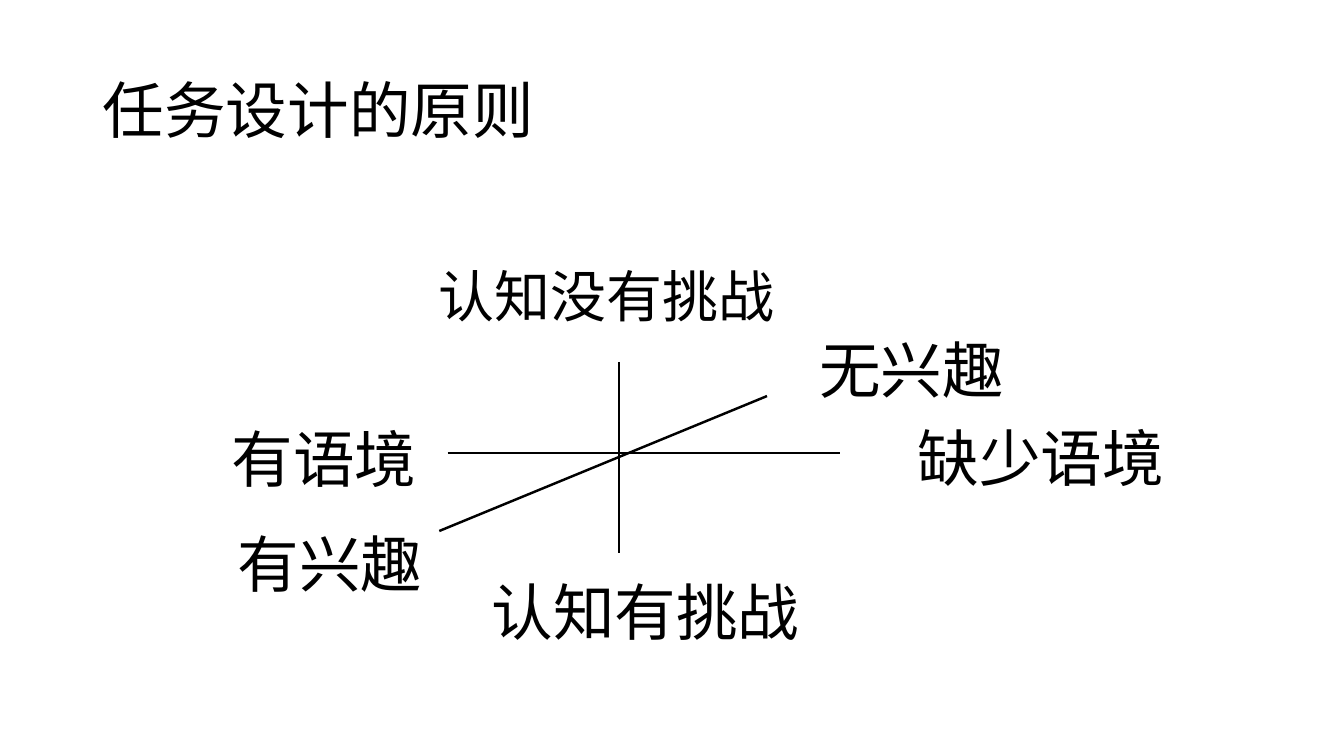
from lxml.etree import SubElement
from pptx import Presentation
from pptx.dml.color import RGBColor
from pptx.enum.shapes import MSO_CONNECTOR as Connector
from pptx.enum.text import MSO_ANCHOR as Anchor, MSO_AUTO_SIZE as AutoSize, PP_ALIGN as Align
from pptx.oxml.ns import qn
from pptx.util import Cm, Pt

# Content: text, box (left, top, width, height in cm), style name
LABELS = [
    ("任务设计的原则", (2.34, 1.02, 29.21, 3.68), "title"),
    ("认知没有挑战", (10.8, 6.46, 11.2, 1.96), "small"),
    ("有语境", (5.59, 10.49, 5.21, 2.13), "end"),
    ("缺少语境", (22.88, 10.45, 6.78, 2.13), "end"),
    ("认知有挑战", (12.14, 14.33, 8.79, 2.13), "wide"),
    ("有兴趣", (5.74, 13.13, 5.21, 2.13), "end"),
    ("无兴趣", (20.14, 8.33, 5.74, 2.24), "interest"),
]
# Axes (context, challenge, interest): start and end points in cm
AXES = [
    ((11.28, 11.42), (21.16, 11.42)),
    ((15.6, 9.12), (15.6, 13.93)),
    ((11.07, 13.38), (19.33, 9.98)),
]

BASE_FRAME = {"word_wrap": False, "auto_size": AutoSize.SHAPE_TO_FIT_TEXT,
              "vertical_anchor": Anchor.TOP}
WIDE_FRAME = BASE_FRAME | {"word_wrap": True}
BASE_PARAGRAPH = {"alignment": Align.LEFT}
LABEL_FONT = {"name": "Arial", "size": Pt(44)}
THEME = {
    "ink": RGBColor(0, 0, 0),
    "axis_width": Pt(1.75),
    "styles": {
        "title": {
            "frame": {"word_wrap": True, "auto_size": AutoSize.NONE,
                      "vertical_anchor": Anchor.MIDDLE},
            "paragraph": BASE_PARAGRAPH | {"line_spacing": 0.9},
            "font": LABEL_FONT | {"name": "Times New Roman"},
        },
        "small": {"frame": WIDE_FRAME, "paragraph": BASE_PARAGRAPH,
                  "font": LABEL_FONT | {"size": Pt(40)}},
        "wide": {"frame": WIDE_FRAME, "paragraph": BASE_PARAGRAPH, "font": LABEL_FONT},
        "end": {"frame": BASE_FRAME, "paragraph": BASE_PARAGRAPH, "font": LABEL_FONT},
        "interest": {
            "frame": BASE_FRAME | {"margin_left": Cm(0.51), "margin_right": Cm(0.51),
                                   "margin_top": Cm(0.25), "margin_bottom": Cm(0.25)},
            "paragraph": BASE_PARAGRAPH | {"line_spacing": 0.9, "space_before": Pt(10)},
            "font": LABEL_FONT | {"name": "Montserrat"},
        },
    },
}


def apply_format(target, values):
    for name, value in values.items():
        setattr(target, name, value)


def add_label(slide, text, box, style_name):
    style = THEME["styles"][style_name]
    frame = slide.shapes.add_textbox(*map(Cm, box)).text_frame
    paragraph = frame.paragraphs[0]
    run = paragraph.add_run()
    run.text = text
    apply_format(frame, style["frame"])
    apply_format(paragraph, style["paragraph"])
    apply_format(run.font, style["font"])
    run.font.color.rgb = THEME["ink"]


def add_axis(slide, start, end):
    axis = slide.shapes.add_connector(Connector.STRAIGHT, *map(Cm, start + end))
    axis.line.width = THEME["axis_width"]
    axis.line.color.rgb = THEME["ink"]
    SubElement(axis.element.spPr, qn("a:effectLst"))


def main():
    presentation = Presentation()
    apply_format(presentation, {"slide_width": Cm(33.87), "slide_height": Cm(19.05)})
    slide = presentation.slides.add_slide(presentation.slide_layouts[6])

    # Three crossing axes
    for start, end in AXES:
        add_axis(slide, start, end)

    # Title and axis labels
    for label in LABELS:
        add_label(slide, *label)

    presentation.save("out.pptx")


if __name__ == "__main__":
    main()
